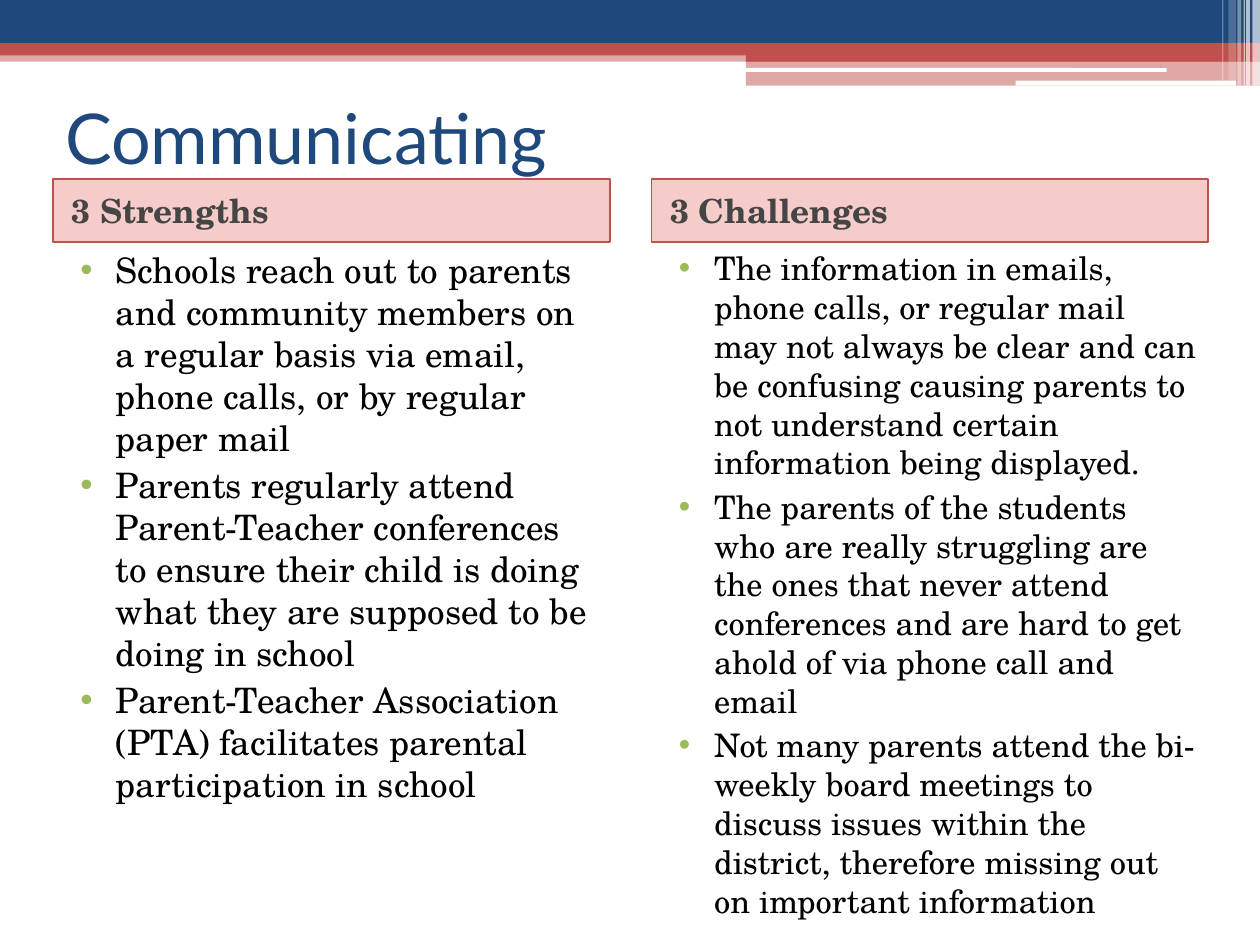
from dataclasses import dataclass

from lxml import etree
from pptx import Presentation
from pptx.dml.color import RGBColor
from pptx.enum.shapes import MSO_SHAPE
from pptx.enum.text import MSO_ANCHOR
from pptx.oxml.ns import qn
from pptx.util import Inches, Pt

RECTANGLE = MSO_SHAPE.RECTANGLE
ROUNDED = MSO_SHAPE.ROUNDED_RECTANGLE
MIDDLE = MSO_ANCHOR.MIDDLE
TOP = MSO_ANCHOR.TOP

NAVY = RGBColor(0x1F, 0x49, 0x7D)
RED = RGBColor(0xC0, 0x50, 0x4D)
HEADING_RED = RGBColor(0xDD, 0x35, 0x30)
GREEN = RGBColor(0x9B, 0xBB, 0x59)
GRAY = RGBColor(0x45, 0x45, 0x45)
BLACK = RGBColor(0, 0, 0)
WHITE = RGBColor(0xFF, 0xFF, 0xFF)

TITLE_FONT = "Lato"
BODY_FONT = "TeX Gyre Schola"
MARGIN = 0.42
COLUMN_WIDTH = 4.42
HEADING_TOP = 1.42
HEADING_HEIGHT = 0.5


@dataclass
class Bar:
    left: float
    top: float
    width: float
    height: float
    color: RGBColor
    opacity: int = 100
    preset: int = RECTANGLE


@dataclass
class Column:
    left: float
    heading: str
    size: float
    height: float
    points: list[str]


BARS = [
    Bar(0, 0.4, 10, 0.09, RED, 50),
    Bar(0, 0, 10, 0.34, NAVY),
    Bar(0, 0.34, 10, 0.1, RED),
    Bar(5.92, 0.39, 4.08, 0.1, RED),
    Bar(5.92, 0.48, 4.08, 0.2, RED, 50),
    Bar(5.91, 0.54, 3.35, 0.03, WHITE, preset=ROUNDED),
    Bar(8.06, 0.64, 1.75, 0.04, WHITE, preset=ROUNDED),
    Bar(9.94, 0, 0.06, 0.68, WHITE, 65),
    Bar(9.89, 0, 0.03, 0.68, WHITE, 65),
    Bar(9.87, 0, 0.01, 0.68, WHITE, 60),
    Bar(9.82, 0, 0.03, 0.68, WHITE, 40),
    Bar(9.75, 0, 0.06, 0.64, WHITE, 20),
    Bar(9.7, 0, 0.01, 0.64, WHITE, 30),
]

COLUMNS = [
    Column(MARGIN, "3 Strengths", 20, 4.67, [
        "Schools reach out to parents and community members on a regular basis "
        "via email, phone calls, or by regular paper mail",
        "Parents regularly attend Parent-Teacher conferences to ensure their "
        "child is doing what they are supposed to be doing in school",
        "Parent-Teacher Association (PTA) facilitates parental participation "
        "in school",
    ]),
    Column(5.17, "3 Challenges", 18.5, 5.42, [
        "The information in emails, phone calls, or regular mail may not always "
        "be clear and can be confusing causing parents to not understand "
        "certain information being displayed.",
        "The parents of the students who are really struggling are the ones "
        "that never attend conferences and are hard to get ahold of via phone "
        "call and email",
        "Not many parents attend the bi-weekly board meetings to discuss issues "
        "within the district, therefore missing out on important information",
    ]),
]


def draw_bar(slide, bar: Bar):
    shape = slide.shapes.add_shape(bar.preset, Inches(bar.left), Inches(bar.top),
                                   Inches(bar.width), Inches(bar.height))
    shape.shadow.inherit = False
    shape.fill.solid()
    shape.fill.fore_color.rgb = bar.color
    shape.line.fill.background()
    if bar.opacity < 100:
        color = shape.fill._xPr.find(".//" + qn("a:srgbClr"))
        etree.SubElement(color, qn("a:alpha"), val=str(bar.opacity * 1000))
    return shape


def write_text(shape, lines: list[str], font: str, size: float, color: RGBColor,
               anchor=TOP, bold: bool = False) -> None:
    frame = shape.text_frame
    frame.word_wrap = True
    frame.vertical_anchor = anchor
    frame.text = "\n".join(lines)
    for paragraph in frame.paragraphs:
        run_font = paragraph.runs[0].font
        run_font.name = font
        run_font.size = Pt(size)
        run_font.bold = bold
        run_font.color.rgb = color


def indent(paragraph, left: float, first: float = 0):
    """Set the space before and the indents; return the paragraph properties."""
    paragraph.space_before = Pt(3)
    properties = paragraph._p.get_or_add_pPr()
    properties.set("algn", "l")
    properties.set("marL", str(Inches(left)))
    properties.set("indent", str(Inches(first)))
    return properties


def add_bullet(paragraph) -> None:
    properties = indent(paragraph, 0.4, -0.28)
    bullet_color = etree.SubElement(properties, qn("a:buClr"))
    etree.SubElement(bullet_color, qn("a:srgbClr"), val=str(GREEN))
    etree.SubElement(properties, qn("a:buFont"), typeface="Arial")
    etree.SubElement(properties, qn("a:buChar"), char="•")


def draw_heading(slide, column: Column) -> None:
    shape = draw_bar(slide, Bar(column.left, HEADING_TOP, COLUMN_WIDTH,
                                HEADING_HEIGHT, HEADING_RED, 25))
    shape.line.color.rgb = RED
    shape.line.width = Pt(1)
    write_text(shape, [column.heading], BODY_FONT, 19, GRAY, MIDDLE, bold=True)
    indent(shape.text_frame.paragraphs[0], 0.05)


def draw_points(slide, column: Column) -> None:
    box = slide.shapes.add_textbox(
        Inches(column.left), Inches(HEADING_TOP + HEADING_HEIGHT),
        Inches(COLUMN_WIDTH), Inches(column.height))
    write_text(box, column.points, BODY_FONT, column.size, BLACK)
    for paragraph in box.text_frame.paragraphs:
        add_bullet(paragraph)


def main() -> None:
    presentation = Presentation()
    presentation.slide_width = Inches(10)
    presentation.slide_height = Inches(7.5)
    slide = presentation.slides.add_slide(presentation.slide_layouts[6])

    for bar in BARS:
        draw_bar(slide, bar)

    title = slide.shapes.add_textbox(Inches(MARGIN), Inches(0.5),
                                     Inches(9.17), Inches(1.17))
    write_text(title, ["Communicating"], TITLE_FONT, 40, NAVY, MIDDLE)

    for column in COLUMNS:
        draw_heading(slide, column)
        draw_points(slide, column)

    presentation.save("out.pptx")


if __name__ == "__main__":
    main()
